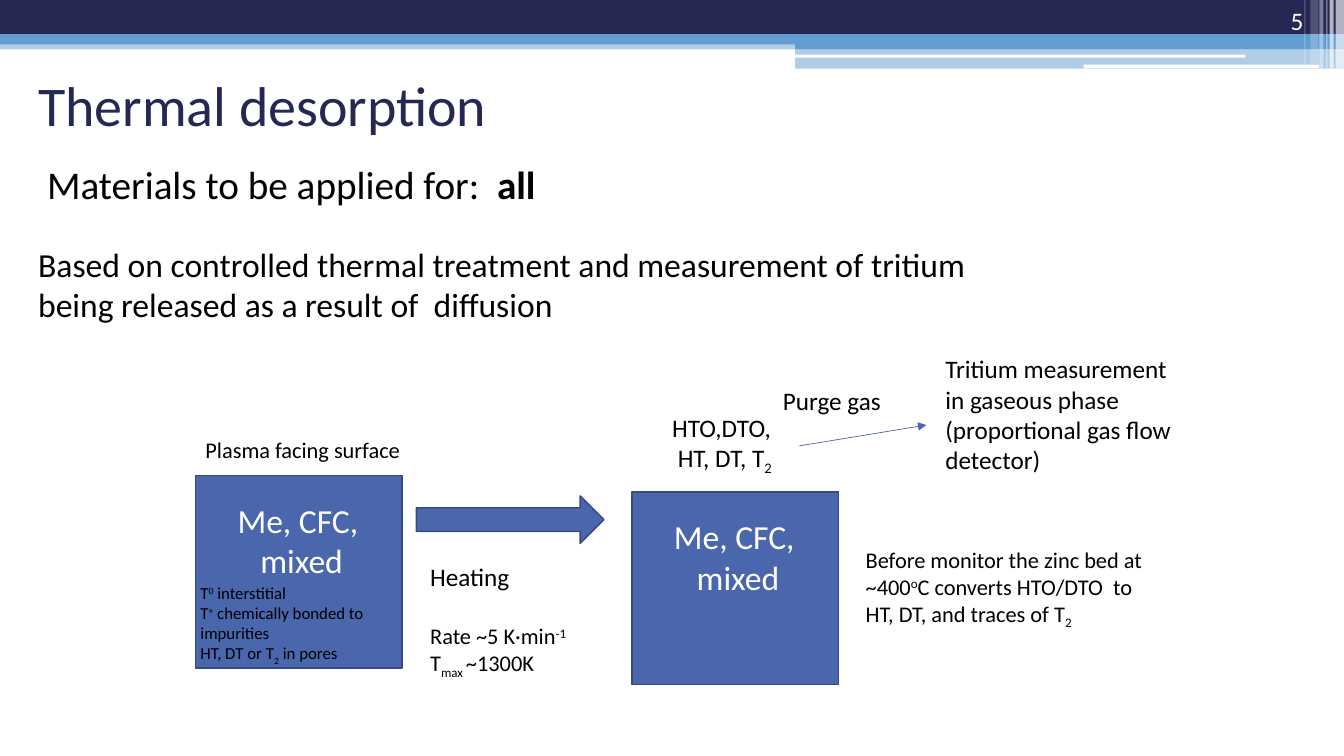
from dataclasses import dataclass
from typing import NamedTuple

from lxml.etree import SubElement
from pptx import Presentation
from pptx.dml.color import RGBColor
from pptx.enum.shapes import MSO_CONNECTOR, MSO_SHAPE
from pptx.enum.text import MSO_ANCHOR, MSO_AUTO_SIZE, PP_ALIGN
from pptx.oxml.ns import qn
from pptx.shapes.autoshape import Shape
from pptx.slide import Slide
from pptx.util import Pt

NAVY = RGBColor(0x24, 0x28, 0x52)
SKY = RGBColor(0x62, 0x9D, 0xD1)
BLUE = RGBColor(0x4A, 0x66, 0xAC)
EDGE = RGBColor(0x37, 0x4B, 0x7F)
WHITE = RGBColor(0xFF, 0xFF, 0xFF)
BLACK = RGBColor(0x00, 0x00, 0x00)

FONT = "Calibri"
SUPER, SUB = 30, -25


class Area(NamedTuple):
    left: float
    top: float
    width: float
    height: float


class Span(NamedTuple):
    text: str
    baseline: int = 0
    bold: bool = False


class Line(NamedTuple):
    spans: list[Span]
    size: float
    before: float = 0


@dataclass(frozen=True)
class Band:
    area: Area
    color: RGBColor
    opacity: int = 100
    kind: MSO_SHAPE = MSO_SHAPE.RECTANGLE


@dataclass(frozen=True)
class Label:
    area: Area
    lines: list[Line]
    color: RGBColor = BLACK
    align: PP_ALIGN = PP_ALIGN.LEFT
    anchor: MSO_ANCHOR = MSO_ANCHOR.TOP
    wrap: bool = False
    grow: bool = True


def plain(size: float, *texts: str) -> list[Line]:
    return [Line([Span(text)], size) for text in texts]


BANDS = [
    Band(Area(0, 28.8, 960, 6.5), SKY, 50),
    Band(Area(0, 0, 960, 24.5), NAVY),
    Band(Area(0, 24.5, 960, 7.2), SKY),
    Band(Area(568, 28, 392, 7), SKY),
    Band(Area(568, 34.8, 392, 14.2), SKY, 50),
    Band(Area(567.5, 39, 322, 2.2), WHITE, 100, MSO_SHAPE.ROUNDED_RECTANGLE),
    Band(Area(774, 46.2, 168, 2.6), WHITE, 100, MSO_SHAPE.ROUNDED_RECTANGLE),
    Band(Area(954, 0, 6, 49), WHITE, 65),
    Band(Area(949.7, 0, 2.9, 49), WHITE, 65),
    Band(Area(947.5, 0, 0.72, 49), WHITE, 60),
    Band(Area(942.5, 0, 2.9, 49), WHITE, 40),
    Band(Area(936, 0, 5.8, 46), WHITE, 20),
    Band(Area(931.7, 0, 0.72, 46), WHITE, 30),
]

SAMPLES = [(139.7, 339.8), (451.4, 351.4)]

LABELS = [
    Label(Area(20.2, 42.5, 648, 63.4), plain(40, "Thermal desorption"), NAVY,
          anchor=MSO_ANCHOR.MIDDLE, wrap=True, grow=False),
    Label(Area(858.2, 0, 80, 28.8), plain(18, "5"), WHITE, PP_ALIGN.RIGHT,
          MSO_ANCHOR.BOTTOM, wrap=True, grow=False),
    Label(Area(26.6, 110.9, 367.2, 41),
          [Line([Span("Materials to be applied for:  "), Span("all", bold=True)], 28)]),
    Label(Area(20.2, 170.6, 717.8, 65.5),
          plain(24, "Based on controlled thermal treatment and measurement of tritium "
                    "being released as a result of  diffusion"), wrap=True),
    Label(Area(139.7, 308.2, 154.8, 26.6), plain(16, "Plasma facing surface")),
    Label(Area(136.1, 412.6, 154.1, 65.5), [
        Line([Span("T"), Span("0", SUPER), Span(" interstitial")], 12),
        Line([Span("T"), Span("+", SUPER), Span(" chemically bonded to impurities")], 12),
        Line([Span("HT, DT or T"), Span("2", SUB), Span(" in pores")], 12),
    ], wrap=True),
    Label(Area(473, 290.9, 87.8, 51), [
        Line([Span("HTO,DTO,")], 18),
        Line([Span(" HT, DT, T"), Span("2", SUB)], 18),
    ]),
    Label(Area(300.2, 397.4, 113.8, 90), [
        Line([Span("Heating")], 18),
        Line([Span("Rate ~5 K·min"), Span("-1", SUPER)], 16, before=22),
        Line([Span("T"), Span("max ", SUB), Span("~1300K")], 16),
    ]),
    Label(Area(552.2, 271.4, 85, 28.8), plain(18, "Purge gas")),
    Label(Area(668.2, 249.1, 175.7, 94.3),
          plain(18, "Tritium measurement in gaseous phase (proportional gas flow detector)"),
          wrap=True),
    Label(Area(611.3, 386.6, 221, 65.5), [
        Line([Span("Before monitor the zinc bed at ~400"), Span("o", SUPER),
              Span("C converts HTO/DTO  to HT, DT, and traces of T"), Span("2", SUB)], 16),
    ], wrap=True),
]


def add_filled(page: Slide, kind: MSO_SHAPE, area: Area, color: RGBColor) -> Shape:
    shape = page.shapes.add_shape(kind, *map(Pt, area))
    shape.shadow.inherit = False
    shape.fill.solid()
    shape.fill.fore_color.rgb = color
    return shape


def add_band(page: Slide, band: Band) -> None:
    shape = add_filled(page, band.kind, band.area, band.color)
    shape.line.fill.background()
    if band.opacity < 100:
        color = shape.fill._xPr.find(qn("a:solidFill"))[0]
        SubElement(color, qn("a:alpha")).set("val", str(band.opacity * 1000))


def add_block(page: Slide, kind: MSO_SHAPE, area: Area) -> None:
    shape = add_filled(page, kind, area, BLUE)
    shape.line.color.rgb = EDGE
    shape.line.width = Pt(1)


def add_label(page: Slide, label: Label) -> None:
    box = page.shapes.add_textbox(*map(Pt, label.area))
    frame = box.text_frame
    frame.word_wrap = label.wrap
    frame.auto_size = MSO_AUTO_SIZE.SHAPE_TO_FIT_TEXT if label.grow else MSO_AUTO_SIZE.NONE
    frame.vertical_anchor = label.anchor
    for index, line in enumerate(label.lines):
        para = frame.add_paragraph() if index else frame.paragraphs[0]
        para.alignment = label.align
        para.space_before = Pt(line.before)
        para.font.name = FONT
        para.font.size = Pt(line.size)
        para.font.color.rgb = label.color
        for span in line.spans:
            run = para.add_run()
            run.text = span.text
            if span.bold:
                run.font.bold = True
            if span.baseline:
                run._r.get_or_add_rPr().set("baseline", str(span.baseline * 1000))


def add_sample(page: Slide, left: float, top: float) -> None:
    add_block(page, MSO_SHAPE.RECTANGLE, Area(left, top, 147.6, 137.5))
    add_label(page, Label(Area(left + 22.3, top + 13.7, 101.5, 65.5),
                          plain(24, "Me, CFC,", " mixed"), WHITE, PP_ALIGN.CENTER))


def add_purge_arrow(page: Slide) -> None:
    arrow = page.shapes.add_connector(
        MSO_CONNECTOR.STRAIGHT, Pt(571), Pt(318.5), Pt(661.7), Pt(303.6))
    arrow.line.color.rgb = BLUE
    arrow.line.width = Pt(0.5)
    SubElement(arrow.line._get_or_add_ln(), qn("a:tailEnd")).set("type", "triangle")
    SubElement(arrow._element.spPr, qn("a:effectLst"))


def main() -> None:
    deck = Presentation()
    deck.slide_width, deck.slide_height = Pt(960), Pt(540)
    page = deck.slides.add_slide(deck.slide_layouts[6])
    for band in BANDS:
        add_band(page, band)
    for left, top in SAMPLES:
        add_sample(page, left, top)
    add_block(page, MSO_SHAPE.RIGHT_ARROW, Area(297.4, 354.2, 134, 34))
    for label in LABELS:
        add_label(page, label)
    add_purge_arrow(page)
    deck.save("out.pptx")


if __name__ == "__main__":
    main()
